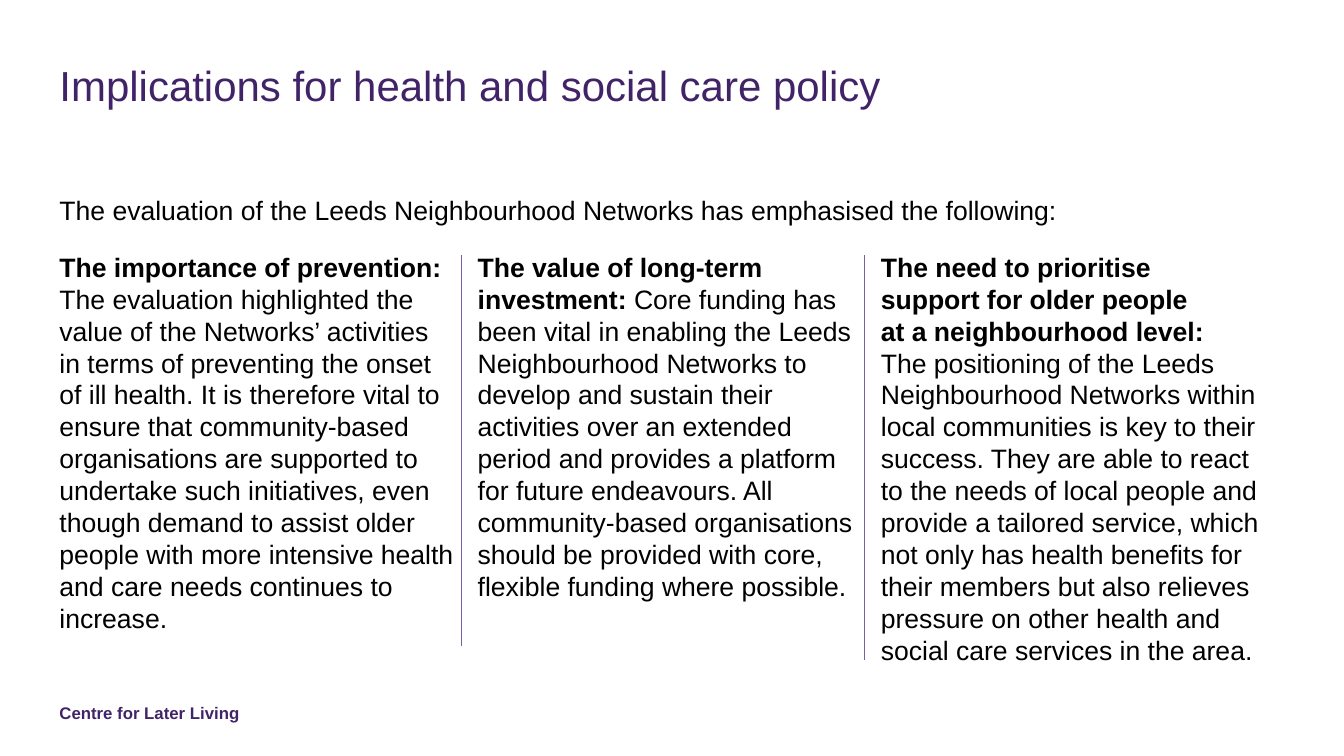
import pptx
import pptx.util
import pptx.dml.color
import pptx.enum.shapes
import pptx.oxml.ns
import lxml.etree

Cm = pptx.util.Cm
Pt = pptx.util.Pt
PURPLE = pptx.dml.color.RGBColor(0x41, 0x24, 0x68)
LILAC = pptx.dml.color.RGBColor(0x7F, 0x5C, 0xA3)
BLACK = pptx.dml.color.RGBColor(0x00, 0x00, 0x00)

MARGIN = 1.5
COLUMN_TOP = 6.32
DIVIDER_TOP = 6.43
DIVIDER_GAP = 0.41
BODY_SIZE = 19

deck = pptx.Presentation()
deck.slide_width = Cm(33.87)
deck.slide_height = Cm(19.05)
page = deck.slides.add_slide(deck.slide_layouts[6])


def style(spans, size, color, bold=False):
    for span in spans:
        span.font.name = "Arial"
        span.font.size = Pt(size)
        span.font.color.rgb = color
        span.font.bold = bold


def add_text(left, top, width, height, text, size, color, bold=False):
    box = page.shapes.add_textbox(Cm(left), Cm(top), Cm(width), Cm(height))
    frame = box.text_frame
    frame.word_wrap = True
    frame.margin_left = frame.margin_right = 0
    frame.margin_top = frame.margin_bottom = 0
    para = frame.paragraphs[0]
    para.text = text
    para.line_spacing = Pt(size * 1.2)
    style(para.runs, size, color, bold)
    return para


add_text(MARGIN, 17.7, 9.04, 0.51, "Centre for Later Living", 12, PURPLE, True)
add_text(MARGIN, 1.5, 30.86, 2.87,
         "Implications for health and social care policy", 30, PURPLE)
intro = add_text(
    MARGIN, 4.88, 30.68, 0.94,
    "The evaluation of the Leeds Neighbourhood Networks has emphasised the following:",
    BODY_SIZE, BLACK)
intro.space_after = Pt(14)

columns = [
    (MARGIN, 9.93, 11.51, None,
     "The importance of prevention: ",
     "The evaluation highlighted the value of the Networks’ activities in terms of "
     "preventing the onset of ill health. It is therefore vital to ensure that "
     "community-based organisations are supported to undertake such initiatives, even "
     "though demand to assist older people with more intensive health and care needs "
     "continues to increase."),
    (12.04, 9.75, 12.67, 9.86,
     "The value of long-term investment: ",
     "Core funding has been vital in enabling the Leeds Neighbourhood Networks to "
     "develop and sustain their activities over an extended period and provides a "
     "platform for future endeavours. All community-based organisations should be "
     "provided with core, flexible funding where possible."),
    (22.2, 9.75, 11.23, 10.21,
     "The need to prioritise \nsupport for older people \nat a neighbourhood level: \n",
     "The positioning of the Leeds Neighbourhood Networks within local communities is "
     "key to their success. They are able to react to the needs of local people and "
     "provide a tailored service, which not only has health benefits for their members "
     "but also relieves pressure on other health and social care services in the area."),
]

for left, width, height, divider_length, heading, body in columns:
    para = add_text(left, COLUMN_TOP, width, height, heading, BODY_SIZE, BLACK, True)
    para.space_after = Pt(14)
    span = para.add_run()
    span.text = body
    style([span], BODY_SIZE, BLACK)
    if divider_length:
        x = Cm(left - DIVIDER_GAP)
        divider = page.shapes.add_connector(
            pptx.enum.shapes.MSO_CONNECTOR.STRAIGHT,
            x, Cm(DIVIDER_TOP), x, Cm(DIVIDER_TOP + divider_length))
        divider.line.color.rgb = LILAC
        divider.line.width = Pt(1)
        lxml.etree.SubElement(divider._element.spPr, pptx.oxml.ns.qn("a:effectLst"))

deck.save("out.pptx")
